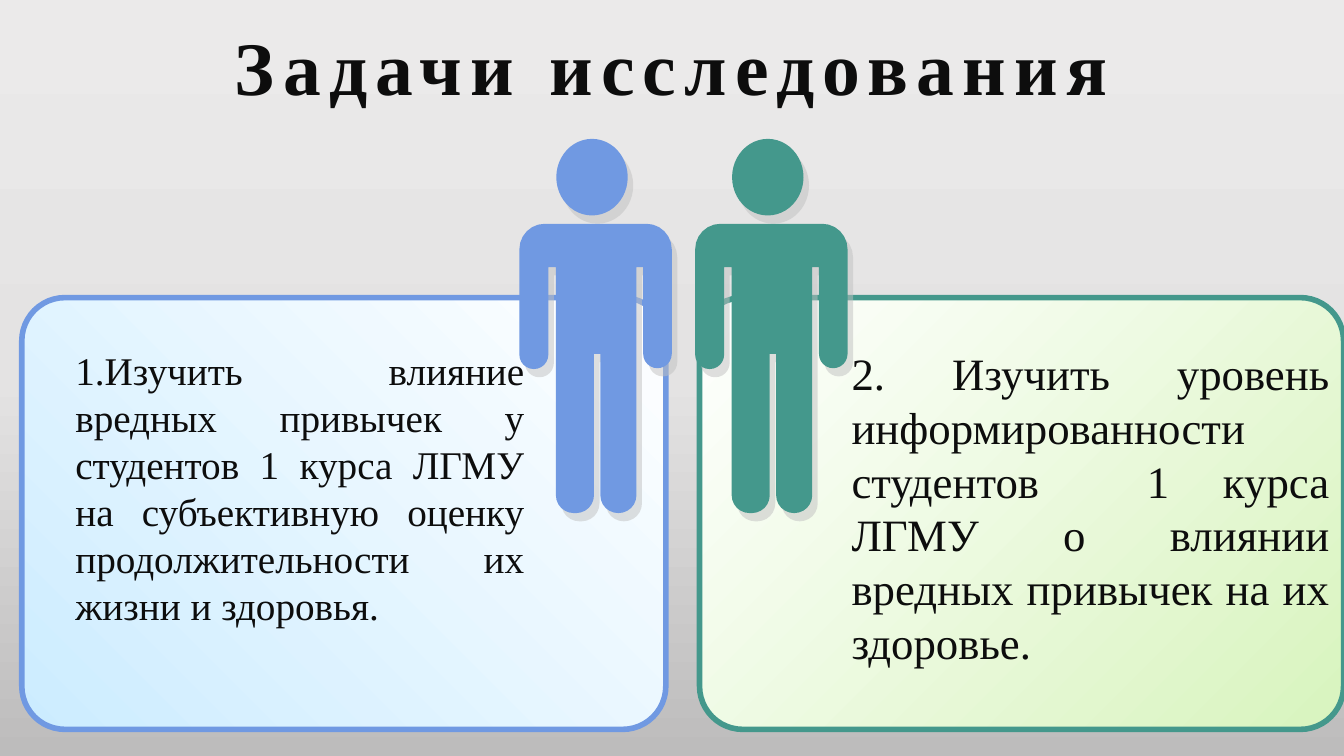
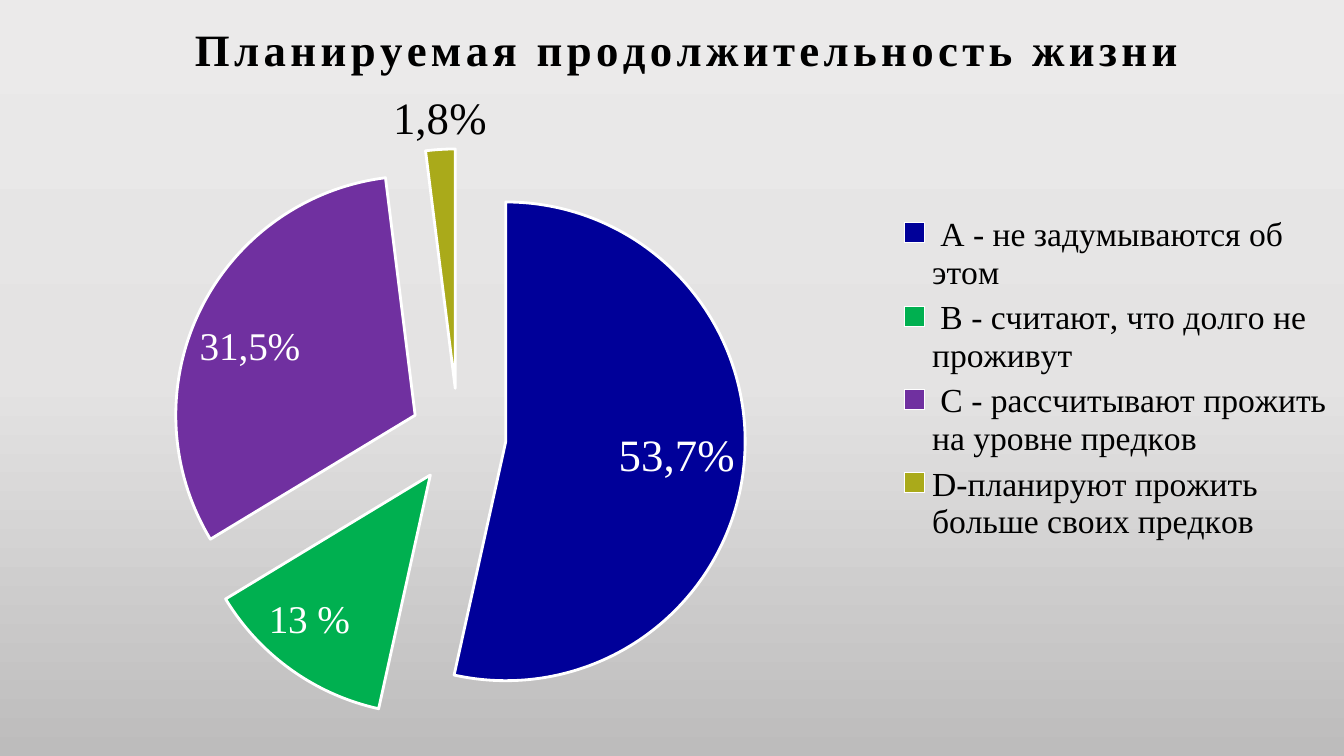
import math

from pptx import Presentation
from pptx import util as u
from pptx.chart.data import CategoryChartData
from pptx.dml.color import RGBColor
from pptx.enum import chart as charts, shapes, text
from pptx.oxml import parse_xml
from pptx.oxml.ns import nsdecls, qn

FONT = "Times New Roman"
WIDTH, HEIGHT = 33.87, 19.05
INK, BLACK, WHITE = "0D0D0D", "000000", "FFFFFF"
BLUE, GREEN = "7099E2", "44988C"
BACKDROP = [(0, "EBEAEA"), (50, "E4E3E3"), (100, "BDBCBC")]

PANEL_TOP, PANEL_WIDTH, PANEL_HEIGHT = 7.5, 16.23, 10.88
TEXT_TOP = 8.59
HEAD_TOP, BODY_TOP = 3.5, 5.64
# Body corners in outline order: x, y, rounding radius
BODY = [
    (0, 0, 0.64), (3.84, 0, 0.64),
    (3.84, 3.64, 0.36), (3.12, 3.64, 0.36),
    (3.12, 1.09, 0), (2.95, 1.09, 0),
    (2.95, 7.29, 0.45), (2.04, 7.29, 0.45),
    (2.04, 3.28, 0), (1.88, 3.28, 0),
    (1.88, 7.29, 0.45), (0.92, 7.29, 0.45),
    (0.92, 1.09, 0), (0.73, 1.09, 0),
    (0.73, 3.66, 0.36), (0, 3.66, 0.36),
]

# Legend entry, share, label, label size, label colour, label shift in %, slice colour
ANSWERS = [
    (" А - не задумываются об этом",
     54, "53,7%", 32, WHITE, (-0.2, 1.9), "000099"),
    (" В - считают, что долго не проживут",
     13, "13 %", 28, WHITE, (-1.9, -3), "00B050"),
    (" С - рассчитывают прожить на уровне предков",
     32, "31,5%", 28, WHITE, (-0.4, 1.7), "7030A0"),
    ("D-планируют прожить больше своих предков",
     2, "1,8%", 32, BLACK, None, "AAAA1A"),
]


def color(value):
    return RGBColor.from_string(value)


def set_gradient(owner, stops, angle):
    """Replace the solid fill directly under owner; angle runs clockwise."""
    marks = "".join(
        f'<a:gs pos="{pos * 1000}"><a:srgbClr val="{value}"/></a:gs>'
        for pos, value in stops
    )
    gradient = parse_xml(
        f'<a:gradFill {nsdecls("a")} rotWithShape="1"><a:gsLst>{marks}</a:gsLst>'
        f'<a:lin ang="{angle * 60000}" scaled="0"/></a:gradFill>'
    )
    owner.replace(owner.find(qn("a:solidFill")), gradient)


def set_backdrop(master):
    master.background.fill.solid()
    set_gradient(master.element.xpath("./p:cSld/p:bg/p:bgPr")[0], BACKDROP, 90)


def style_run(run, size, value, bold=False, spacing=0):
    run.font.name = FONT
    run.font.size = u.Pt(size)
    run.font.bold = bold
    run.font.color.rgb = color(value)
    if spacing:
        run.font._element.set("spc", str(round(spacing * 100)))


def add_text(slide, box, wording, size, align, line_spacing, anchor, **style):
    frame = slide.shapes.add_textbox(*map(u.Cm, box)).text_frame
    frame.word_wrap = True
    frame.vertical_anchor = anchor
    paragraph = frame.paragraphs[0]
    paragraph.alignment = align
    paragraph.line_spacing = line_spacing
    run = paragraph.add_run()
    run.text = wording
    style_run(run, size, INK, **style)


def add_task(slide, left, width, wording, size):
    add_text(slide, (left, TEXT_TOP, width, 8.5), wording, size,
             text.PP_ALIGN.JUSTIFY, 1.0, text.MSO_ANCHOR.TOP)


def add_panel(slide, left, edge, stops, angle):
    panel = slide.shapes.add_shape(
        shapes.MSO_SHAPE.ROUNDED_RECTANGLE,
        *map(u.Cm, (left, PANEL_TOP, PANEL_WIDTH, PANEL_HEIGHT)))
    panel.adjustments[0] = 0.1
    panel.shadow.inherit = False
    panel.fill.solid()
    set_gradient(panel.element.spPr, stops, angle)
    panel.line.color.rgb = color(edge)
    panel.line.width = u.Pt(4)


def round_corners(corners, steps=6):
    """Outline points of a right-angled polygon with circular corners."""
    points = []
    for i, (x, y, radius) in enumerate(corners):
        if not radius:
            points.append((x, y))
            continue
        sides = []
        for nx, ny, _ in (corners[i - 1], corners[(i + 1) % len(corners)]):
            length = math.hypot(nx - x, ny - y)
            sides.append(((nx - x) / length, (ny - y) / length))
        (ax, ay), (bx, by) = sides
        for step in range(steps + 1):
            turn = math.pi / 2 * step / steps
            a, b = radius * (1 - math.sin(turn)), radius * (1 - math.cos(turn))
            points.append((x + a * ax + b * bx, y + a * ay + b * by))
    return points


def add_person(slide, left, fill):
    head = slide.shapes.add_shape(
        shapes.MSO_SHAPE.OVAL, *map(u.Cm, (left + 0.93, HEAD_TOP, 1.8, 1.93)))
    outline = [(u.Cm(left + x), u.Cm(BODY_TOP + y)) for x, y in round_corners(BODY)]
    builder = slide.shapes.build_freeform(*outline[0])
    builder.add_line_segments(outline[1:], close=True)
    for part in (head, builder.convert_to_shape()):
        part.fill.solid()
        part.fill.fore_color.rgb = color(fill)
        part.line.fill.background()
        part.shadow.inherit = False
        part.element.spPr.find(qn("a:effectLst")).append(parse_xml(
            f'<a:outerShdw {nsdecls("a")} dist="{u.Cm(0.25)}" dir="{56 * 60000}" '
            'algn="ctr" rotWithShape="0"><a:srgbClr val="C0C0C0">'
            '<a:alpha val="50000"/></a:srgbClr></a:outerShdw>'))


def place(element, x, y, width=None, height=None, index=1):
    """Lay out a chart part by hand, in percent; a data label is shifted."""
    for old in element.findall(qn("c:layout")):
        element.remove(old)
    inner = '<c:layoutTarget val="inner"/>' if element.tag == qn("c:plotArea") else ""
    edge = '<c:xMode val="edge"/><c:yMode val="edge"/>'
    if element.tag == qn("c:dLbl"):
        edge = ""
    size = f'<c:w val="{width / 100}"/><c:h val="{height / 100}"/>' if width else ""
    element.insert(index, parse_xml(
        f'<c:layout {nsdecls("c")}><c:manualLayout>{inner}{edge}'
        f'<c:x val="{x / 100}"/><c:y val="{y / 100}"/>{size}'
        '</c:manualLayout></c:layout>'))


def add_chart_title(chart, wording):
    run = chart.chart_title.text_frame.paragraphs[0].add_run()
    run.text = wording
    style_run(run, 32, BLACK, bold=True, spacing=3)
    place(chart.chart_title._element, 13.9, 1.7)


def add_legend(chart):
    chart.has_legend = True
    legend = chart.legend
    legend.position = charts.XL_LEGEND_POSITION.RIGHT
    legend.include_in_layout = False
    legend.font.name = FONT
    legend.font.size = u.Pt(24)
    legend.font.color.rgb = color(BLACK)
    place(legend._element, 66.5, 27.6, 33, 45)


def style_slices(series):
    position = charts.XL_LABEL_POSITION
    series.format.line.color.rgb = color(WHITE)
    series._element.find(qn("c:spPr")).addnext(
        parse_xml(f'<c:explosion {nsdecls("c")} val="20"/>'))
    for i, (_, _, label, size, ink, shift, fill) in enumerate(ANSWERS):
        point = series.points[i]
        point.format.fill.solid()
        point.format.fill.fore_color.rgb = color(fill)
        point.format.line.color.rgb = color(WHITE)
        point.format.line.width = u.Pt(2)
        run = point.data_label.text_frame.paragraphs[0].add_run()
        run.text = label
        style_run(run, size, ink)
        point.data_label.position = (
            position.INSIDE_END if shift else position.OUTSIDE_END)
        if shift:
            label_element = series._element.xpath(f'.//c:dLbl[c:idx/@val="{i}"]')[0]
            place(label_element, *shift)


def add_lifespan_pie(slide):
    data = CategoryChartData(number_format="0")
    data.categories = [answer[0] for answer in ANSWERS]
    data.add_series("Series 1", [answer[1] for answer in ANSWERS])
    chart = slide.shapes.add_chart(
        charts.XL_CHART_TYPE.PIE, 0, 0, u.Cm(WIDTH), u.Cm(HEIGHT), data).chart
    chart.font.name = FONT
    chart.font.size = u.Pt(10)
    chart.font.color.rgb = color(BLACK)
    plot = chart.plots[0]
    plot.vary_by_categories = True
    style_slices(plot.series[0])
    add_chart_title(chart, "Планируемая продолжительность жизни")
    add_legend(chart)
    place(chart._chartSpace.chart.plotArea, 12.6, 19.7, 43, 76, index=0)


def add_tasks_slide(slide):
    add_text(slide, (4.23, 0.74, 25.4, 2.12), "Задачи исследования", 54,
             text.PP_ALIGN.CENTER, 0.9, text.MSO_ANCHOR.MIDDLE, bold=True, spacing=6)
    add_panel(slide, 0.55, BLUE, [(0, "CCECFF"), (100, WHITE)], 315)
    add_person(slide, 13.09, BLUE)
    add_task(slide, 1.65, 11.81,
             "1.Изучить влияние вредных привычек у студентов 1 курса ЛГМУ "
             "на субъективную оценку продолжительности их жизни и здоровья.", 28)
    add_panel(slide, 17.63, GREEN, [(0, WHITE), (100, "D8F4BE")], 45)
    add_task(slide, 21.21, 12.55,
             "2. Изучить уровень информированности студентов  1 курса ЛГМУ "
             "о влиянии вредных привычек на их здоровье.", 32)
    add_person(slide, 17.52, GREEN)


def main():
    prs = Presentation()
    prs.slide_width, prs.slide_height = u.Cm(WIDTH), u.Cm(HEIGHT)
    set_backdrop(prs.slide_master)
    blank = prs.slide_layouts[6]
    add_tasks_slide(prs.slides.add_slide(blank))
    add_lifespan_pie(prs.slides.add_slide(blank))
    prs.save("out.pptx")


if __name__ == "__main__":
    main()
